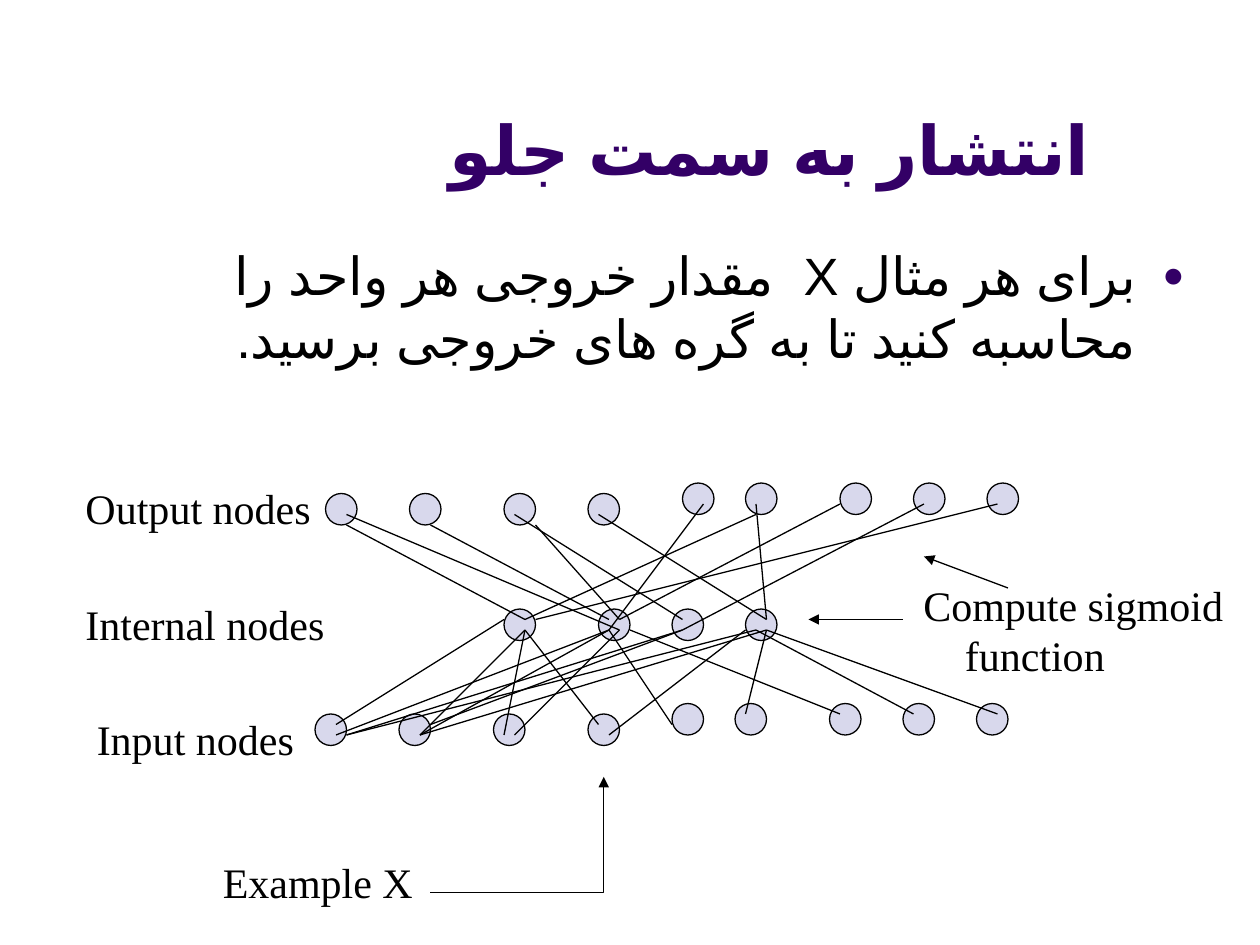
from lxml import etree
from pptx import Presentation
from pptx.dml.color import RGBColor
from pptx.enum.lang import MSO_LANGUAGE_ID
from pptx.enum.shapes import MSO_CONNECTOR, MSO_SHAPE
from pptx.enum.text import MSO_ANCHOR, MSO_AUTO_SIZE, PP_ALIGN
from pptx.oxml.ns import qn
from pptx.util import Inches, Pt

STRAIGHT, ELBOW = MSO_CONNECTOR.STRAIGHT, MSO_CONNECTOR.ELBOW
OVAL = MSO_SHAPE.OVAL
BOTTOM, RIGHT, NO_FIT = MSO_ANCHOR.BOTTOM, PP_ALIGN.RIGHT, MSO_AUTO_SIZE.NONE
PERSIAN, ENGLISH = MSO_LANGUAGE_ID.FARSI, MSO_LANGUAGE_ID.ENGLISH_US
COLORS = {"title": "330066", "ink": "000000", "node": "D8D8EC"}
CELL = Inches(1) // 12
NODE_SIZE = 3
LAYERS = {
    "output": [(1, 1), (9, 1), (18, 1), (26, 1), (35, 0), (41, 0), (50, 0), (57, 0), (64, 0)],
    "internal": [(column, 12) for column in (18, 27, 34, 41)],
    "input": [(0, 22), (8, 22), (17, 22), (26, 22), (34, 21), (40, 21), (49, 21), (56, 21), (63, 21)],
}
INPUT_EDGES = [
    (2, 23, 18, 13), (2, 24, 28, 14), (3, 24, 35, 14), (3, 24, 42, 14),
    (10, 24, 20, 14), (10, 24, 28, 14), (11, 23, 35, 14), (10, 24, 43, 14),
    (18, 24, 20, 14), (19, 24, 29, 14), (27, 23, 20, 14), (28, 24, 41, 14),
    (34, 23, 28, 14), (50, 22, 30, 14), (57, 22, 42, 14), (65, 22, 43, 14),
    (41, 22, 43, 14),
]
OUTPUT_EDGES = [
    (20, 13, 3, 4), (21, 13, 65, 2), (20, 13, 42, 3), (28, 13, 11, 4),
    (28, 14, 37, 2), (29, 13, 21, 4), (29, 13, 50, 2), (35, 14, 58, 2),
    (43, 13, 42, 2), (43, 13, 27, 3), (35, 13, 19, 3), (3, 3, 29, 14),
]


def color(name):
    """Return the named colour."""
    return RGBColor.from_string(COLORS[name])


def style_text(para, size, font, ink, bold=False, language=ENGLISH):
    """Format every run of a paragraph, complex script included."""
    for span in para.runs:
        span.font.size, span.font.name, span.font.bold = Pt(size), font, bold
        span.font.color.rgb = color(ink)
        span.font.language_id = language
        etree.SubElement(span.font._element, qn("a:cs")).set("typeface", font)


def place(shape, box):
    """Move a shape to a box given in inches."""
    shape.left, shape.top, shape.width, shape.height = map(Inches, box)


def write_persian(shape, box, text, size, ink, bold=False):
    """Place a right-to-left paragraph in a placeholder."""
    place(shape, box)
    frame = shape.text_frame
    frame.text, frame.word_wrap, frame.auto_size = text, True, NO_FIT
    para = frame.paragraphs[0]
    para.alignment = RIGHT
    para._p.get_or_add_pPr().set("rtl", "1")
    style_text(para, size, "Arial", ink, bold, PERSIAN)
    return para


def add_title(page, box):
    """Write the title at the bottom of its box."""
    write_persian(page.shapes.title, box, "انتشار به سمت جلو", 39, "title", True)
    page.shapes.title.text_frame.vertical_anchor = BOTTOM


def add_body(page, box):
    """Write the bulleted explanation."""
    para = write_persian(
        page.placeholders[1], box,
        "برای هر مثال X  مقدار خروجی هر واحد را محاسبه کنید تا به گره های خروجی برسید.",
        30, "ink")
    para.space_before = Pt(6)
    properties = para._p.get_or_add_pPr()
    properties.set("marL", str(Inches(0.38)))
    properties.set("indent", str(-Inches(0.38)))
    bullet_color = etree.SubElement(properties, qn("a:buClr"))
    etree.SubElement(bullet_color, qn("a:srgbClr")).set("val", COLORS["title"])
    etree.SubElement(properties, qn("a:buSzPct")).set("val", "70000")
    etree.SubElement(properties, qn("a:buChar")).set("char", "●")


def add_line(page, origin, ends, kind=STRAIGHT, arrow=False):
    """Draw a thin line between two grid points counted from an origin."""
    points = [int((origin[i % 2] + end) * CELL) for i, end in enumerate(ends)]
    line = page.shapes.add_connector(kind, *points)
    line.line.color.rgb, line.line.width = color("ink"), Pt(0.75)
    if arrow:
        etree.SubElement(line.line._get_or_add_ln(), qn("a:tailEnd")).set("type", "triangle")
    etree.SubElement(line._element.spPr, qn("a:effectLst"))
    return line


def add_network(page, origin):
    """Draw the three layers of nodes and the edges between them."""
    for layer in LAYERS.values():
        for column, row in layer:
            node = page.shapes.add_shape(
                OVAL, (origin[0] + column) * CELL, (origin[1] + row) * CELL,
                NODE_SIZE * CELL, NODE_SIZE * CELL)
            node.shadow.inherit = False
            node.fill.solid()
            node.fill.fore_color.rgb = color("node")
            node.line.color.rgb, node.line.width = color("ink"), Pt(0.75)
    for ends in INPUT_EDGES + OUTPUT_EDGES:
        add_line(page, origin, ends)


def add_label(page, box, text):
    """Write a label whose later lines are indented."""
    label = page.shapes.add_textbox(*map(Inches, box))
    frame = label.text_frame
    frame.text, frame.word_wrap = text, False
    for index, para in enumerate(frame.paragraphs):
        style_text(para, 24, "Times New Roman", "ink")
        if index:
            para._p.get_or_add_pPr().set("marL", str(Inches(0.33)))


def add_annotations(page, origin):
    """Name the layers and point at the network with arrows."""
    add_label(page, (0.67, 5.61, 1.77, 0.5), "Input nodes")
    add_label(page, (0.58, 4.7, 2.1, 0.5), "Internal nodes")
    add_label(page, (0.58, 3.78, 1.99, 0.5), "Output nodes")
    add_label(page, (1.67, 6.75, 1.71, 0.5), "Example X")
    add_label(page, (7.23, 4.55, 2.66, 0.9), "Compute sigmoid\nfunction")
    bend = add_line(page, origin, (11, 39, 27.5, 28), ELBOW, True)
    bend._element.spPr.find(qn("a:prstGeom")).set("prst", "bentConnector2")
    add_line(page, origin, (56, 13, 47, 13), arrow=True)
    add_line(page, origin, (66, 10, 58, 7), arrow=True)


def main():
    """Build and save the slide."""
    deck = Presentation()
    deck.slide_width, deck.slide_height = Inches(10), Inches(7.5)
    page = deck.slides.add_slide(deck.slide_layouts[1])
    network_origin = (30, 46)
    add_title(page, (0.5, 0.13, 8.25, 1.42))
    add_body(page, (0.5, 1.88, 9, 4.82))
    add_network(page, network_origin)
    add_annotations(page, network_origin)
    deck.save("out.pptx")


if __name__ == "__main__":
    main()
